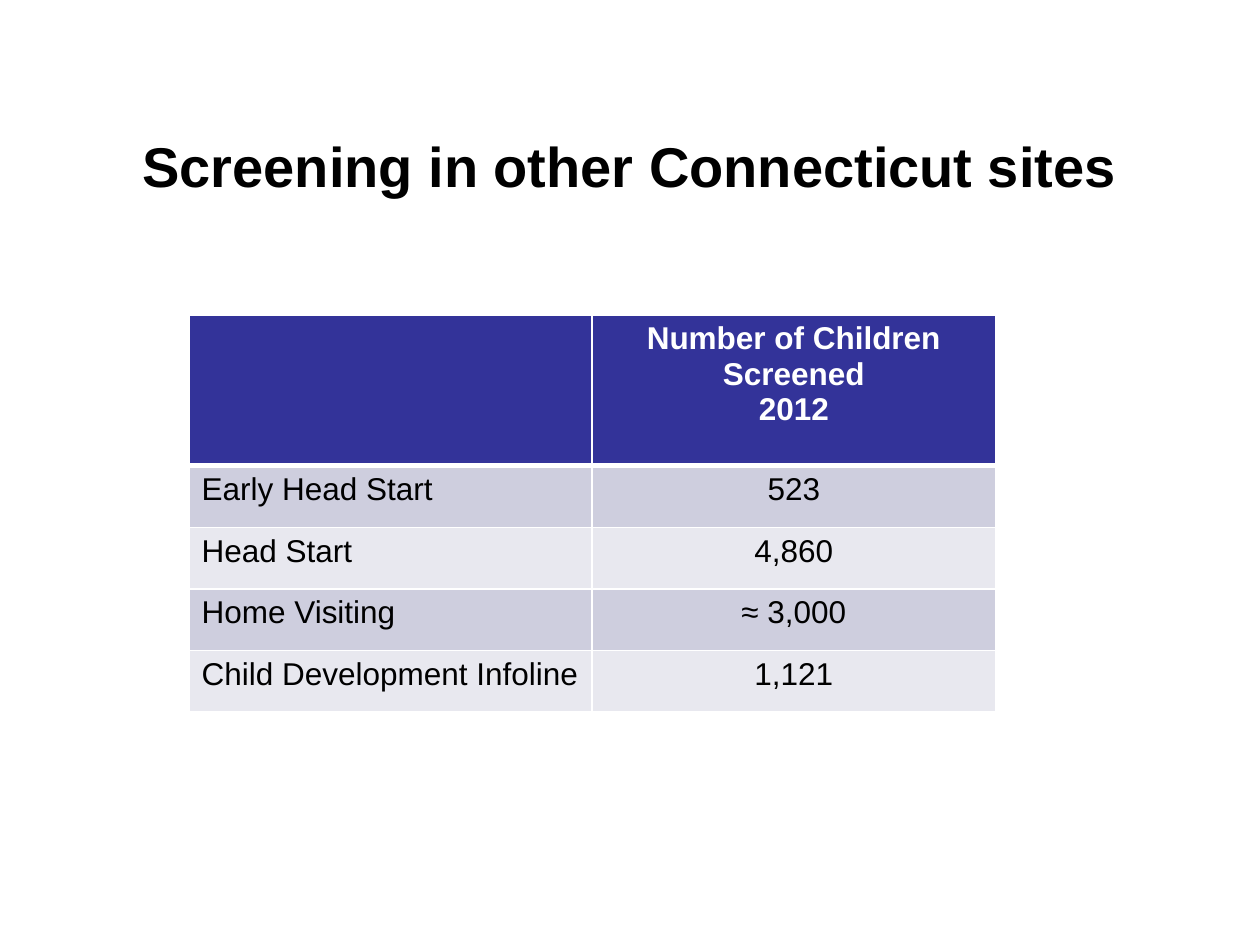
from pptx import Presentation
from pptx.dml.color import RGBColor
from pptx.enum.text import MSO_ANCHOR as Anchor, PP_ALIGN as Align
from pptx.oxml.ns import qn
from pptx.util import Inches, Pt
from lxml.etree import SubElement


def color(hex_code):
    return RGBColor.from_string(hex_code)


class Deck:
    FONT = "Arial"
    INK, PAPER, HEADER = "000000", "FFFFFF", "333399"
    BANDS = ("CECEDE", "E8E8EF")

    def __init__(self, width, height):
        self.prs = Presentation()
        self.prs.slide_width, self.prs.slide_height = Inches(width), Inches(height)
        self.slide = self.prs.slides.add_slide(self.prs.slide_layouts[6])

    def box(self, left, top, width, height):
        """Turn shares of the slide's size into lengths."""
        w, h = self.prs.slide_width, self.prs.slide_height
        return int(left * w), int(top * h), int(width * w), int(height * h)

    def set_text(self, frame, text, size, ink, bold=False, align=Align.LEFT):
        frame.text = text
        frame.word_wrap = True
        for paragraph in frame.paragraphs:
            paragraph.alignment = align
            for run in paragraph.runs:
                run.font.name, run.font.size, run.font.bold = self.FONT, Pt(size), bold
                run.font.color.rgb = color(ink)

    def title(self, text, *share):
        frame = self.slide.shapes.add_textbox(*self.box(*share)).text_frame
        self.set_text(frame, text, 32, self.INK, True, Align.CENTER)
        frame.vertical_anchor = Anchor.MIDDLE

    def border(self, cell, **widths):
        """Draw cell borders; widths in points by side (L, R, T, B)."""
        properties = cell._tc.get_or_add_tcPr()
        for side, width in widths.items():
            line = SubElement(properties, qn(f"a:ln{side}"), w=str(Pt(width)))
            fill = SubElement(line, qn("a:solidFill"))
            SubElement(fill, qn("a:srgbClr"), val=self.PAPER)

    def table(self, rows, header_share, *share):
        frame = self.slide.shapes.add_table(len(rows), len(rows[0]), *self.box(*share))
        table, height = frame.table, frame.height
        header_height = int(height * header_share)
        body_height = (height - header_height) // (len(rows) - 1)
        for r, values in enumerate(rows):
            is_header = r == 0
            table.rows[r].height = header_height if is_header else body_height
            for c, value in enumerate(values):
                cell = table.cell(r, c)
                self.border(cell, L=1, R=1, T=3 if r == 1 else 1, B=3 if is_header else 1)
                cell.fill.solid()
                cell.fill.fore_color.rgb = color(
                    self.HEADER if is_header else self.BANDS[(r - 1) % 2])
                self.set_text(cell.text_frame, value, 18,
                              self.PAPER if is_header else self.INK, is_header,
                              Align.CENTER if c else Align.LEFT)

    def save(self):
        self.prs.save("out.pptx")


def main():
    deck = Deck(10, 7.5)

    # Heading
    deck.title("Screening in other Connecticut sites", 0.04, 0.1, 0.92, 0.15)

    # Children screened at each site
    screenings = [
        ("", "Number of Children Screened\n2012"),
        ("Early Head Start", "523"),
        ("Head Start", "4,860"),
        ("Home Visiting", "≈ 3,000"),
        ("Child Development Infoline", "1,121"),
    ]
    deck.table(screenings, 0.38, 0.15, 1 / 3, 0.64, 0.42)
    deck.save()


if __name__ == "__main__":
    main()
